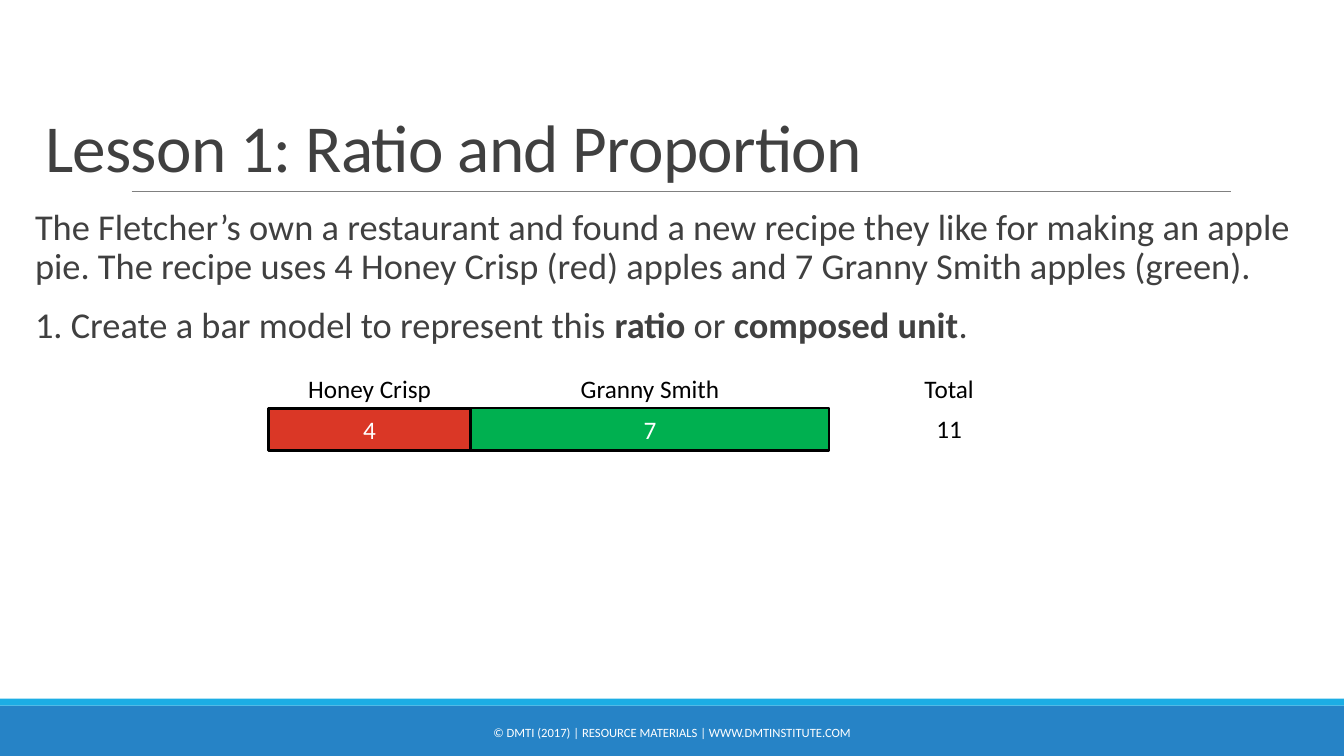
from pptx import Presentation
from pptx.dml.color import RGBColor
from pptx.enum import shapes, text
from pptx.oxml import ns
from pptx.util import Pt
from lxml import etree

COLORS = {"dark": "404040", "white": "FFFFFF", "black": "000000", "rule": "808080",
          "blue": "2683C6", "cyan": "1CADE4", "red": "DA3726", "green": "00B050"}
CENTER, LEFT = text.PP_ALIGN.CENTER, text.PP_ALIGN.LEFT
MIDDLE, TOP, BOTTOM = text.MSO_ANCHOR.MIDDLE, text.MSO_ANCHOR.TOP, text.MSO_ANCHOR.BOTTOM


def color(name):
    """Return a palette colour."""
    return RGBColor.from_string(COLORS[name])


def set_attrs(target, values):
    """Set each attribute of the target from a dict."""
    for name, value in values.items():
        setattr(target, name, value)


def write(sp, paragraphs, size, ink, frame=None, para=None):
    """Fill a shape with paragraphs of (text, bold) runs."""
    tf = sp.text_frame
    set_attrs(tf, {"word_wrap": True, "auto_size": text.MSO_AUTO_SIZE.NONE,
                   "vertical_anchor": TOP, **(frame or {})})
    for i, runs in enumerate(paragraphs):
        p = tf.add_paragraph() if i else tf.paragraphs[0]
        set_attrs(p, {"alignment": CENTER, **(para or {})})
        if i == 0:
            p.space_before = Pt(0)
        for words, bold in runs:
            r = p.add_run()
            r.text = words
            set_attrs(r.font, {"name": "Calibri", "size": Pt(size), "bold": bold})
            r.font.color.rgb = color(ink)
    return tf


def add_text(s, box, paragraphs, size, ink, frame=None, para=None):
    """Add a text box in the given box."""
    sp = s.shapes.add_textbox(*map(Pt, box))
    write(sp, paragraphs, size, ink, frame, para)


def add_rect(s, box, fill, line=None):
    """Add a filled rectangle, with a black outline if a width is given."""
    sp = s.shapes.add_shape(shapes.MSO_SHAPE.RECTANGLE, *map(Pt, box))
    sp.shadow.inherit = False
    sp.fill.solid()
    sp.fill.fore_color.rgb = color(fill)
    if line:
        sp.line.color.rgb = color("black")
        sp.line.width = Pt(line)
    else:
        sp.line.fill.background()
    return sp


def add_footer(s, box):
    """Draw the two footer bands and the copyright line."""
    x, y, w, h = box
    add_rect(s, (x, y + 5, w, h - 5), "blue")
    add_rect(s, (x, y, w, 5), "cyan")
    add_text(s, (x + 290, y + 9.5, w - 580, 28.8),
             [[("© DMTI (2017) | RESOURCE MATERIALS | WWW.DMTINSTITUTE.COM", False)]],
             9, "white", {"vertical_anchor": MIDDLE})


def add_heading(s, box):
    """Place the title and the rule under it."""
    x, y, w, h = box
    title = s.shapes.title
    set_attrs(title, dict(zip(("left", "top", "width", "height"), map(Pt, box))))
    tf = write(title, [[("Lesson 1: Ratio and Proportion", False)]], 48, "dark",
               {"vertical_anchor": BOTTOM}, {"alignment": LEFT, "line_spacing": 0.85})
    tf.paragraphs[0].runs[0]._r.get_or_add_rPr().set("spc", "-50")
    rule = s.shapes.add_connector(shapes.MSO_CONNECTOR.STRAIGHT,
                                  Pt(x + 69), Pt(y + h), Pt(x + w + 1), Pt(y + h))
    rule.line.color.rgb = color("rule")
    rule.line.width = Pt(0.5)
    etree.SubElement(rule._element.spPr, ns.qn("a:effectLst"))


def add_problem(s, box):
    """Write the word problem and its question."""
    story = ("The Fletcher’s own a restaurant and found a new recipe they like for making "
             "an apple pie. The recipe uses 4 Honey Crisp (red) apples and 7 Granny Smith "
             "apples (green).")
    question = [("1. Create a bar model to represent this ", False), ("ratio", True),
                (" or ", False), ("composed unit", True), (".", False)]
    add_text(s, box, [[(story, False)], question], 26, "dark",
             {"margin_left": 0, "margin_right": 0},
             {"alignment": LEFT, "line_spacing": 0.9,
              "space_before": Pt(12), "space_after": Pt(2)})


def add_bar_model(s, box):
    """Draw the labelled ratio bars and the total."""
    x, y, w, h = box
    label_h = 28.8
    parts = [("Honey Crisp", "4", 0, 145, "red", 2.25),
             ("Granny Smith", "7", 145, 255.6, "green", 1.5),
             ("Total", "11", w - 136, 136, None, None)]
    for label, count, dx, width, fill, line in parts:
        add_text(s, (x + dx, y, width, label_h), [[(label, False)]], 18, "black")
        cell = (x + dx, y + label_h, width, h - label_h)
        if fill:
            write(add_rect(s, cell, fill, line), [[(count, False)]], 18, "white",
                  {"vertical_anchor": MIDDLE})
        else:
            add_text(s, cell, [[(count, False)]], 18, "black")


def main():
    """Build and save the slide."""
    prs = Presentation()
    prs.slide_width, prs.slide_height = Pt(960), Pt(540)
    s = prs.slides.add_slide(prs.slide_layouts[5])
    add_footer(s, (0, 499, 960, 41))
    add_heading(s, (25, 22.5, 853, 114))
    add_problem(s, (25, 145.5, 902, 119.5))
    add_bar_model(s, (191.5, 262.8, 554.5, 59))
    prs.save("out.pptx")


if __name__ == "__main__":
    main()
